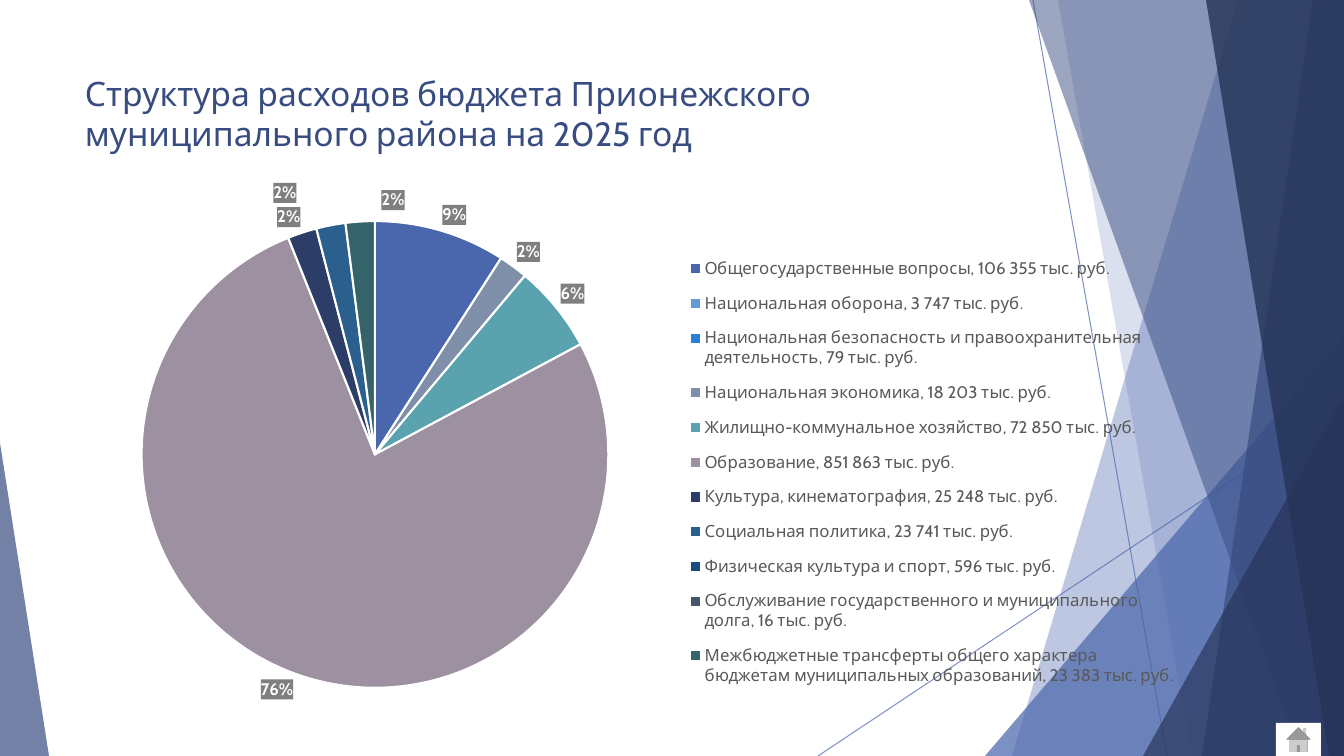
from copy import deepcopy

from lxml import etree
from pptx import Presentation
from pptx.chart.data import CategoryChartData
from pptx.dml.color import RGBColor
from pptx.enum.chart import XL_CHART_TYPE, XL_LABEL_POSITION, XL_LEGEND_POSITION
from pptx.enum.shapes import MSO_CONNECTOR, MSO_SHAPE
from pptx.enum.text import MSO_ANCHOR
from pptx.oxml import parse_xml
from pptx.oxml.ns import nsdecls, qn
from pptx.util import Pt

PIE = XL_CHART_TYPE.PIE
OUTSIDE = XL_LABEL_POSITION.OUTSIDE_END
RIGHT = XL_LEGEND_POSITION.RIGHT
STRAIGHT = MSO_CONNECTOR.STRAIGHT
TRIANGLE = MSO_SHAPE.ISOSCELES_TRIANGLE
HOME = MSO_SHAPE.ACTION_BUTTON_HOME
TOP = MSO_ANCHOR.TOP

EMU_PER_PX = 914400 / 100.8
W, H = 1344, 756
FONT = "Cabin"
BLUE, DEEP, NAVY, WHITE = "4A66AC", "384C81", "253356", "FFFFFF"
LABEL_BACK, LEGEND_TEXT = "7F7F7F", "595959"

# name, thousands of roubles, percent, colour, label shift as a share of the chart
EXPENSES = [
    ("Общегосударственные вопросы", "106 355", 9, BLUE, None),
    ("Национальная оборона", "3 747", 0, "629DD1", (0, -0.02)),
    ("Национальная безопасность и правоохранительная деятельность",
     "79", 0, "297FD5", (0.04, -0.01)),
    ("Национальная экономика", "18 203", 2, "7F8FA9", None),
    ("Жилищно-коммунальное хозяйство", "72 850", 6, "5AA2AE", None),
    ("Образование", "851 863", 76, "9D90A0", None),
    ("Культура, кинематография", "25 248", 2, "2C3D67", None),
    ("Социальная политика", "23 741", 2, "2A5F8E", (-0.03, -0.03)),
    ("Физическая культура и спорт", "596", 0, "194C80", None),
    ("Обслуживание государственного и муниципального долга", "16", 0, "47556A", None),
    ("Межбюджетные трансферты общего характера бюджетам муниципальных образований",
     "23 383", 2, "34636A", (0.03, -0.01)),
]


def px(n):
    return round(n * EMU_PER_PX)


def rgb(value):
    return RGBColor.from_string(value)


def set_font(font, size, color, bold=False):
    font.name, font.size, font.bold = FONT, Pt(size), bold
    font.color.rgb = rgb(color)


def set_alpha(element, percent):
    color = element.find(".//" + qn("a:srgbClr"))
    etree.SubElement(color, qn("a:alpha")).set("val", str(percent * 1000))


def manual_layout(**values):
    """Return a c:layout element holding the given settings in order."""
    items = "".join(f'<c:{k} val="{v}"/>' for k, v in values.items())
    return parse_xml(f'<c:layout {nsdecls("c")}><c:manualLayout>{items}'
                     "</c:manualLayout></c:layout>")


def place(parent, index, **values):
    """Give a plot area or legend a fixed place within the chart."""
    for old in parent.findall(qn("c:layout")):
        parent.remove(old)
    parent.insert(index, manual_layout(**values))


class Deck:
    def __init__(self):
        self.prs = Presentation()
        self.prs.slide_width, self.prs.slide_height = px(W), px(H)
        self.s = self.prs.slides.add_slide(self.prs.slide_layouts[6])

    def paint(self, sp, color, alpha=100):
        sp.shadow.inherit = False
        sp.fill.solid()
        sp.fill.fore_color.rgb = rgb(color)
        sp.line.fill.background()
        if alpha < 100:
            set_alpha(sp.fill._xPr, alpha)

    def line(self, x1, y1, x2, y2, color, alpha):
        c = self.s.shapes.add_connector(STRAIGHT, px(x1), px(y1), px(x2), px(y2))
        c.line.color.rgb = rgb(color)
        c.line.width = Pt(0.75)
        set_alpha(c.line._ln, alpha)
        etree.SubElement(c._element.spPr, qn("a:effectLst"))

    def band(self, top_x, bottom_x, color, alpha):
        """Fill from a slanted left edge to the right edge of the slide."""
        fb = self.s.shapes.build_freeform(top_x, 0, EMU_PER_PX)
        fb.add_line_segments([(W, 0), (W, H), (bottom_x, H)], close=True)
        self.paint(fb.convert_to_shape(), color, alpha)

    def shape(self, kind, x, y, w, h, color, alpha=100, adj=None):
        sp = self.s.shapes.add_shape(kind, px(x), px(y), px(w), px(h))
        if adj is not None:
            sp.adjustments[0] = adj
        self.paint(sp, color, alpha)

    def text(self, text, x, y, w, h, size, color, bold=False):
        tf = self.s.shapes.add_textbox(px(x), px(y), px(w), px(h)).text_frame
        tf.word_wrap = True
        tf.vertical_anchor = TOP
        r = tf.paragraphs[0].add_run()
        r.text = text
        set_font(r.font, size, color, bold)

    def pie(self, rows, x, y, w, h):
        names, sums, percents, colors, shifts = zip(*rows)
        data = CategoryChartData()
        data.categories = [f"{name}, {total} тыс. руб." for name, total in zip(names, sums)]
        data.add_series("Расходы", percents)
        chart = self.s.shapes.add_chart(PIE, px(x), px(y), px(w), px(h), data).chart
        chart.has_title = False
        set_font(chart.font, 10, "000000")
        place(chart._chartSpace.chart.plotArea, 0, layoutTarget="inner", xMode="edge",
              yMode="edge", x=0.054, y=0.099, w=0.433, h=0.838)

        chart.has_legend = True
        legend = chart.legend
        legend.position = RIGHT
        legend.include_in_layout = False
        set_font(legend.font, 12, LEGEND_TEXT)
        place(legend._element, 1, xMode="edge", yMode="edge", x=0.56, y=0.14, w=0.44, h=0.82)

        plot = chart.plots[0]
        plot.vary_by_categories = True
        series = plot.series[0]
        for i, color in enumerate(colors):
            fmt = series.points[i].format
            fmt.fill.solid()
            fmt.fill.fore_color.rgb = rgb(color)
            fmt.line.color.rgb = rgb(WHITE)
            fmt.line.width = Pt(1.5)
        self.percent_labels(series, shifts)

    def percent_labels(self, series, shifts):
        """Label slices with their whole percents, moving those with a shift."""
        labels = series.data_labels
        labels.show_value = True
        labels.number_format, labels.number_format_is_linked = '0"%"', False
        labels.position = OUTSIDE
        set_font(labels.font, 12, WHITE, bold=True)
        node = labels._element
        node.find(qn("c:txPr")).addprevious(parse_xml(
            f'<c:spPr {nsdecls("c", "a")}><a:solidFill><a:srgbClr val="{LABEL_BACK}"/>'
            "</a:solidFill></c:spPr>"))
        leader = node.find(qn("c:showLeaderLines"))
        if leader is None:
            leader = etree.SubElement(node, qn("c:showLeaderLines"))
        leader.set("val", "0")
        shared = [e for e in node if e is not leader]
        moved = [(i, shift) for i, shift in enumerate(shifts) if shift]
        for position, (i, (dx, dy)) in enumerate(moved):
            label = parse_xml(f'<c:dLbl {nsdecls("c")}><c:idx val="{i}"/></c:dLbl>')
            label.append(manual_layout(x=dx, y=dy))
            label.extend(deepcopy(shared))
            node.insert(position, label)


def main():
    d = Deck()
    d.line(1033, 0, 1167, H, BLUE, 70)
    d.line(W, 406, 818, H, BLUE, 70)
    d.band(1238, 1012, BLUE, 36)
    d.band(1058, 1192, BLUE, 20)
    d.shape(TRIANGLE, 985, 336, 359, 420, BLUE, 72, adj=1)
    d.band(1029, 1301, DEEP, 50)
    d.band(1313, 1202, DEEP, 70)
    d.band(1206, 1329, NAVY, 80)
    d.shape(TRIANGLE, 1143, 396, 201, 360, NAVY, 66, adj=1)
    d.shape(TRIANGLE, 0, 443, 49, 313, DEEP, 70, adj=0)
    d.text("Структура расходов бюджета Прионежского муниципального района на 2025 год",
           75, 68, 829, 98, size=24, color=DEEP)
    d.pie(EXPENSES, 75, 166, 1109, 557)
    d.shape(HOME, 1276, 723, 45, 33, WHITE)
    d.prs.save("out.pptx")


if __name__ == "__main__":
    main()
